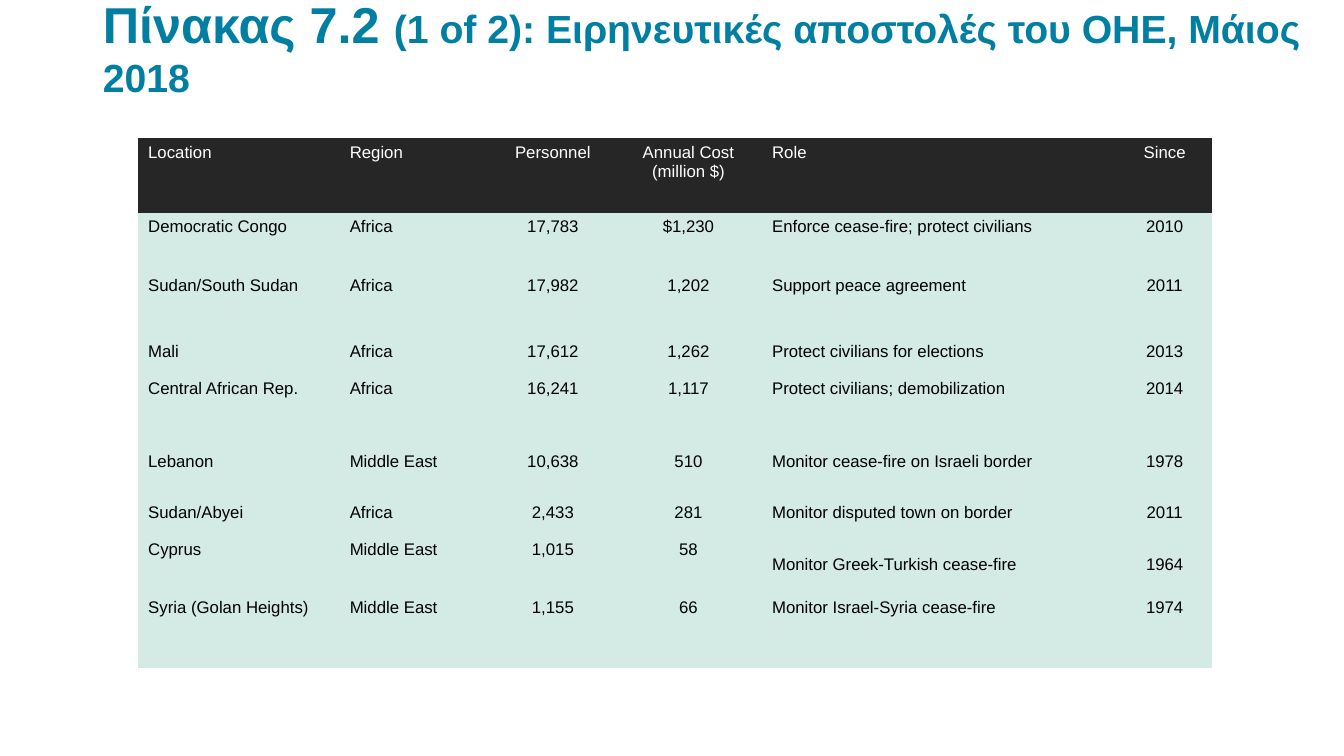
import dataclasses

import pptx
import pptx.dml.color
import pptx.enum.text
import pptx.util

Pt = pptx.util.Pt
ALIGN = pptx.enum.text.PP_ALIGN
ANCHOR = pptx.enum.text.MSO_ANCHOR


@dataclasses.dataclass(frozen=True)
class Theme:
    font: str = "Arial"
    title: str = "007FA3"
    header_fill: str = "262626"
    header_text: str = "FFFFFF"
    body_fill: str = "D4EAE4"
    body_text: str = "000000"
    title_size: int = 36
    subtitle_size: int = 28
    table_size: int = 12


THEME = Theme()
NO_STYLE_NO_GRID = "{2D5ABB26-0587-4C30-8999-92F81FD0307C}"

# Row heights
TALL, MEDIUM, SHORT = 53.28, 41.76, 31.68

# Column width and alignment
COLUMNS = [
    (144, ALIGN.LEFT),
    (108, ALIGN.LEFT),
    (88.56, ALIGN.CENTER),
    (105.12, ALIGN.CENTER),
    (254.16, ALIGN.LEFT),
    (66.96, ALIGN.CENTER),
]

# Row height, first vertically centred column (None: all at top), cell texts
MISSIONS = [
    (TALL, None, ["Location", "Region", "Personnel",
                  "Annual Cost\n(million $)", "Role", "Since"]),
    (MEDIUM, None, ["Democratic Congo", "Africa", "17,783", "$1,230",
                    "Enforce cease-fire; protect civilians", "2010"]),
    (MEDIUM, None, ["Sudan/South Sudan", "Africa", "17,982", "1,202",
                    "Support peace agreement", "2011"]),
    (SHORT, 0, ["Mali", "Africa", "17,612", "1,262",
                "Protect civilians for elections", "2013"]),
    (MEDIUM, None, ["Central African Rep.", "Africa", "16,241", "1,117",
                    "Protect civilians; demobilization", "2014"]),
    (MEDIUM, 0, ["Lebanon", "Middle East", "10,638", "510",
                 "Monitor cease-fire on Israeli border", "1978"]),
    (SHORT, 0, ["Sudan/Abyei", "Africa", "2,433", "281",
                "Monitor disputed town on border", "2011"]),
    (MEDIUM, 4, ["Cyprus", "Middle East", "1,015", "58",
                 "Monitor Greek-Turkish cease-fire", "1964"]),
    (TALL, None, ["Syria (Golan Heights)", "Middle East", "1,155", "66",
                  "Monitor Israel-Syria cease-fire", "1974"]),
]


def rgb(value):
    return pptx.dml.color.RGBColor.from_string(value)


def add_text(para, text, *, size, color, bold=False, align=ALIGN.LEFT):
    para.alignment = align
    span = para.add_run()
    span.text = text
    span.font.name = THEME.font
    span.font.size = Pt(size)
    span.font.bold = bold
    span.font.color.rgb = rgb(color)


def add_title(page, parts):
    box = page.shapes.add_textbox(Pt(73.44), Pt(26.64), Pt(856.8), Pt(46.8))
    frame = box.text_frame
    frame.word_wrap = True
    frame.auto_size = pptx.enum.text.MSO_AUTO_SIZE.SHAPE_TO_FIT_TEXT
    frame.vertical_anchor = ANCHOR.BOTTOM
    frame.margin_left = frame.margin_right = 0
    frame.margin_top = frame.margin_bottom = Pt(1.44)
    for text, size in parts:
        add_text(frame.paragraphs[0], text, size=size, color=THEME.title, bold=True)


def fill_cell(cell, text, *, fill, color, align, anchor):
    cell.fill.solid()
    cell.fill.fore_color.rgb = rgb(fill)
    cell.vertical_anchor = anchor
    frame = cell.text_frame
    for index, line in enumerate(text.split("\n")):
        para = frame.add_paragraph() if index else frame.paragraphs[0]
        add_text(para, line, size=THEME.table_size, color=color, align=align)


def add_missions_table(page):
    width = sum(column[0] for column in COLUMNS)
    height = sum(mission[0] for mission in MISSIONS)
    table = page.shapes.add_table(len(MISSIONS), len(COLUMNS), Pt(98.64), Pt(98.64),
                                  Pt(width), Pt(height)).table
    table.horz_banding = False
    table._tbl.tblPr[0].text = NO_STYLE_NO_GRID

    for column, (column_width, _) in zip(table.columns, COLUMNS):
        column.width = Pt(column_width)

    for row, (row_height, centred_from, texts) in enumerate(MISSIONS):
        table.rows[row].height = Pt(row_height)
        fill = THEME.body_fill if row else THEME.header_fill
        color = THEME.body_text if row else THEME.header_text
        for col, text in enumerate(texts):
            centred = centred_from is not None and col >= centred_from
            fill_cell(table.cell(row, col), text, fill=fill, color=color,
                      align=COLUMNS[col][1],
                      anchor=ANCHOR.MIDDLE if centred else ANCHOR.TOP)


def main():
    deck = pptx.Presentation()
    deck.slide_width, deck.slide_height = Pt(960), Pt(540)
    page = deck.slides.add_slide(deck.slide_layouts[6])

    # Title
    add_title(page, [
        ("Πίνακας 7.2 ", THEME.title_size),
        ("(1 of 2): Ειρηνευτικές αποστολές του ΟΗΕ, Μάιος 2018", THEME.subtitle_size),
    ])

    # Peacekeeping missions
    add_missions_table(page)

    deck.save("out.pptx")


if __name__ == "__main__":
    main()
